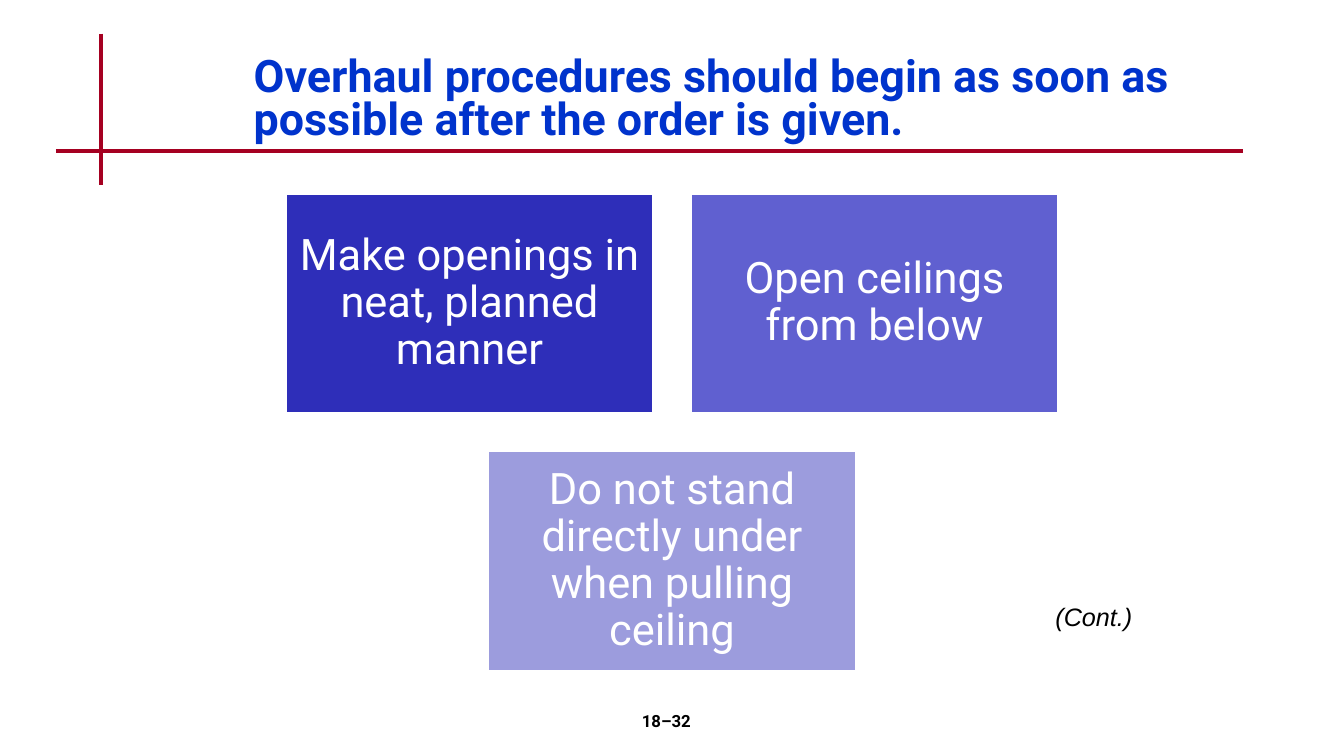
from lxml import etree
from pptx import Presentation
from pptx.dml.color import RGBColor
from pptx.enum.shapes import MSO_CONNECTOR as Connector, MSO_SHAPE as Shape
from pptx.enum.text import MSO_ANCHOR as Anchor, MSO_AUTO_SIZE as AutoSize, PP_ALIGN as Align
from pptx.oxml.ns import qn
from pptx.util import Pt

WHITE = RGBColor(0xFF, 0xFF, 0xFF)
BLACK = RGBColor(0x00, 0x00, 0x00)
TITLE_BLUE = RGBColor(0x00, 0x33, 0xCC)
RULE_RED = RGBColor(0xA5, 0x00, 0x21)
INDIGO = RGBColor(0x2E, 0x2E, 0xB9)
VIOLET = RGBColor(0x60, 0x60, 0xD0)
LAVENDER = RGBColor(0x9C, 0x9C, 0xDD)

SLIDE_WIDTH, SLIDE_HEIGHT = 960, 540
CARD_WIDTH, CARD_HEIGHT, CARD_GAP = 263, 157.5, 26.3
CARDS_TOP = 138
CARD_INSET = 9.3

TITLE = "Overhaul procedures should begin as soon as possible after the order is given."
CARD_ROWS = [
    [("Make openings in neat, planned manner", INDIGO),
     ("Open ceilings from below", VIOLET)],
    [("Do not stand directly under when pulling ceiling", LAVENDER)],
]

TITLE_FONT = dict(name="Roboto", size=Pt(32), bold=True)
CARD_FONT = dict(name="Roboto", size=Pt(31))
NUMBER_FONT = dict(name="Roboto", size=Pt(12), bold=True)
CONTINUED_FONT = dict(name="Arial", size=Pt(18), italic=True)


def set_attributes(target, values):
    for name, value in values.items():
        setattr(target, name, value)


def write(shape, text, font, color, align, anchor=Anchor.TOP, spacing=1.0):
    frame = shape.text_frame
    set_attributes(frame, dict(text=text, word_wrap=True, auto_size=AutoSize.NONE,
                               vertical_anchor=anchor))
    paragraph = frame.paragraphs[0]
    set_attributes(paragraph, dict(alignment=align, line_spacing=spacing))
    set_attributes(paragraph.font, font)
    paragraph.font.color.rgb = color


def add_rule(slide, start_x, start_y, end_x, end_y):
    rule = slide.shapes.add_connector(
        Connector.STRAIGHT, Pt(start_x), Pt(start_y), Pt(end_x), Pt(end_y))
    rule.line.color.rgb = RULE_RED
    rule.line.width = Pt(3)
    etree.SubElement(rule._element.spPr, qn("a:effectLst"))


def add_title(slide):
    title = slide.shapes.title
    set_attributes(title, dict(left=Pt(174), top=Pt(36), width=Pt(671), height=Pt(72)))
    write(title, TITLE, TITLE_FONT, TITLE_BLUE, Align.LEFT, Anchor.MIDDLE, 0.8)


def add_label(slide, text, box, font, align):
    label = slide.shapes.add_textbox(*map(Pt, box))
    write(label, text, font, BLACK, align)


def add_card(slide, text, fill, left, top):
    card = slide.shapes.add_shape(
        Shape.RECTANGLE, Pt(left), Pt(top), Pt(CARD_WIDTH), Pt(CARD_HEIGHT))
    card.shadow.inherit = False
    card.fill.solid()
    card.fill.fore_color.rgb = fill
    card.line.color.rgb = WHITE
    card.line.width = Pt(2)
    sides = ("left", "top", "right", "bottom")
    set_attributes(card.text_frame, {f"margin_{side}": Pt(CARD_INSET) for side in sides})
    write(card, text, CARD_FONT, WHITE, Align.CENTER, Anchor.MIDDLE, 0.9)


def add_cards(slide):
    # Each row is centred on the slide
    for row, cards in enumerate(CARD_ROWS):
        row_width = len(cards) * (CARD_WIDTH + CARD_GAP) - CARD_GAP
        row_left = (SLIDE_WIDTH - row_width) / 2
        top = CARDS_TOP + row * (CARD_HEIGHT + CARD_GAP)
        for column, (text, fill) in enumerate(cards):
            add_card(slide, text, fill, row_left + column * (CARD_WIDTH + CARD_GAP), top)


def main():
    presentation = Presentation()
    presentation.slide_width = Pt(SLIDE_WIDTH)
    presentation.slide_height = Pt(SLIDE_HEIGHT)
    slide = presentation.slides.add_slide(presentation.slide_layouts[5])

    # Crossed rules and heading
    add_rule(slide, 72, 24, 72, 132)
    add_rule(slide, 40, 108, 888, 108)
    add_title(slide)

    # Advice cards
    add_cards(slide)

    # Page number and continuation mark
    add_label(slide, "18–32", (376, 504, 200, 36), NUMBER_FONT, Align.CENTER)
    add_label(slide, "(Cont.)", (696, 426, 120, 29), CONTINUED_FONT, Align.RIGHT)

    presentation.save("out.pptx")


if __name__ == "__main__":
    main()
